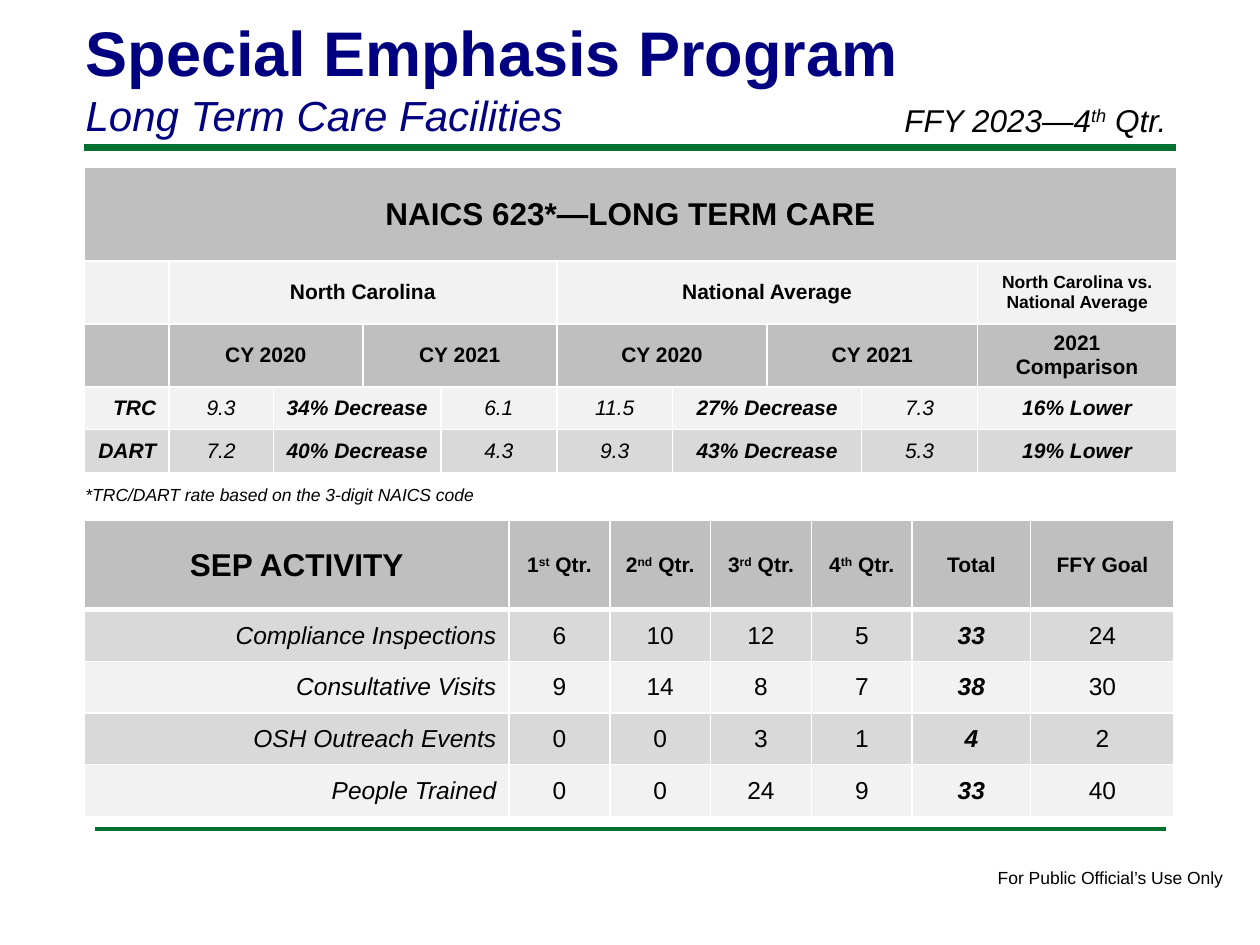
from dataclasses import dataclass

from lxml.etree import SubElement
from pptx import Presentation
from pptx.dml.color import RGBColor
from pptx.enum.shapes import MSO_CONNECTOR
from pptx.enum.text import MSO_ANCHOR, PP_ALIGN
from pptx.oxml.ns import qn
from pptx.util import Inches, Pt


@dataclass(frozen=True)
class Theme:
    font: str = "Arial"
    navy: str = "000080"
    green: str = "007030"
    black: str = "000000"
    white: str = "FFFFFF"
    header: str = "BFBFBF"
    dark: str = "D9D9D9"
    light: str = "F2F2F2"
    title: int = 36
    subtitle: int = 24
    heading: int = 18
    body: int = 14
    label: int = 12
    small: int = 10


THEME = Theme()


@dataclass(frozen=True)
class Style:
    size: int
    bold: bool = False
    italic: bool = False
    color: str = THEME.black
    align: PP_ALIGN = PP_ALIGN.LEFT


@dataclass(frozen=True)
class Cell:
    text: str
    style: Style
    span: int = 1


@dataclass(frozen=True)
class Row:
    height: float
    fill: str
    cells: list[Cell]
    rule: float = 1  # weight of the border below


def add_runs(p, text: str, style: Style) -> None:
    """Write text into a paragraph; parts between carets are superscript."""
    p.alignment = style.align
    for i, part in enumerate(text.split("^")):
        if not part:
            continue
        r = p.add_run()
        r.text = part
        r.font.name = THEME.font
        r.font.size = Pt(style.size)
        r.font.bold = style.bold
        r.font.italic = style.italic
        r.font.color.rgb = RGBColor.from_string(style.color)
        if i % 2:
            r._r.get_or_add_rPr().set("baseline", "30000")


def add_text(s, box: tuple, text: str, style: Style, wrap: bool = False) -> None:
    sp = s.shapes.add_textbox(*map(Inches, box))
    sp.text_frame.word_wrap = wrap
    add_runs(sp.text_frame.paragraphs[0], text, style)


def add_rule(s, left: float, right: float, y: float, weight: float) -> None:
    line = s.shapes.add_connector(MSO_CONNECTOR.STRAIGHT, Inches(left), Inches(y),
                                  Inches(right), Inches(y))
    line.line.color.rgb = RGBColor.from_string(THEME.green)
    line.line.width = Pt(weight)
    SubElement(line._element.spPr, qn("a:effectLst"))


def set_borders(cell, top: float, bottom: float) -> None:
    tc_pr = cell._tc.get_or_add_tcPr()
    weights = {"a:lnL": 1, "a:lnR": 1, "a:lnT": top, "a:lnB": bottom}
    for i, (tag, weight) in enumerate(weights.items()):
        ln = tc_pr.makeelement(qn(tag), {"w": str(Pt(weight))})
        fill = SubElement(ln, qn("a:solidFill"))
        SubElement(fill, qn("a:srgbClr")).set("val", THEME.white)
        tc_pr.insert(i, ln)  # borders come before the fill


def add_grid(s, left: float, top: float, widths: list[float], rows: list[Row]) -> None:
    frame = s.shapes.add_table(len(rows), len(widths), Inches(left), Inches(top),
                               Inches(sum(widths)), Inches(sum(r.height for r in rows)))
    table = frame.table
    table.first_row = table.horz_banding = False
    for col, width in zip(table.columns, widths):
        col.width = Inches(width)
    above = 1
    for i, row in enumerate(rows):
        table.rows[i].height = Inches(row.height)
        for j in range(len(widths)):
            cell = table.cell(i, j)
            cell.fill.solid()
            cell.fill.fore_color.rgb = RGBColor.from_string(row.fill)
            set_borders(cell, above, row.rule)
        j = 0
        for item in row.cells:
            cell = table.cell(i, j)
            if item.span > 1:
                cell.merge(table.cell(i, j + item.span - 1))
            cell.vertical_anchor = MSO_ANCHOR.MIDDLE
            add_runs(cell.text_frame.paragraphs[0], item.text, item.style)
            j += item.span
        above = row.rule


CENTER, RIGHT = PP_ALIGN.CENTER, PP_ALIGN.RIGHT
HEADING = Style(THEME.heading, bold=True, align=CENTER)
LABEL = Style(THEME.label, bold=True, align=CENTER)
SMALL_LABEL = Style(THEME.small, bold=True, align=CENTER)
RATE_NAME = Style(THEME.label, bold=True, italic=True, align=RIGHT)
RATE = Style(THEME.label, italic=True, align=CENTER)
CHANGE = Style(THEME.label, bold=True, italic=True, align=CENTER)
ACTIVITY = Style(THEME.body, italic=True, align=RIGHT)
COUNT = Style(THEME.body, align=CENTER)
TOTAL = Style(THEME.body, bold=True, italic=True, align=CENTER)


def rate_row(fill: str, values: list[str]) -> Row:
    styles = [RATE_NAME, RATE, CHANGE, RATE, RATE, CHANGE, RATE, CHANGE]
    spans = [1, 1, 2, 1, 1, 2, 1, 1]
    return Row(0.34, fill, [Cell(*c) for c in zip(values, styles, spans)])


def activity_row(fill: str, values: list) -> Row:
    styles = [ACTIVITY] + [COUNT] * 4 + [TOTAL, COUNT]
    return Row(0.41, fill, [Cell(str(v), st) for v, st in zip(values, styles)])


def main() -> None:
    prs = Presentation()
    prs.slide_width, prs.slide_height = Inches(10), Inches(7.5)
    s = prs.slides.add_slide(prs.slide_layouts[5])

    # Title and reporting period
    sp = s.shapes.title
    sp.left, sp.top, sp.width, sp.height = map(Inches, (0.58, 0.06, 8.25, 1.11))
    tf = sp.text_frame
    tf.word_wrap = True
    tf.vertical_anchor = MSO_ANCHOR.TOP
    add_runs(tf.paragraphs[0], "Special Emphasis Program",
             Style(THEME.title, bold=True, color=THEME.navy))
    add_runs(tf.add_paragraph(), "Long Term Care Facilities",
             Style(THEME.subtitle, italic=True, color=THEME.navy))
    add_text(s, (7.08, 0.75, 2.5, 0.4), "FFY 2023—4^th^ Qtr.",
             Style(THEME.heading, italic=True), wrap=True)

    # Green rules
    add_rule(s, 0.67, 9.33, 1.17, 4)
    add_rule(s, 0.75, 9.25, 6.58, 2)

    # Injury and illness rates
    years = [Cell(f"CY {year}", LABEL, 2) for year in (2020, 2021)]
    add_grid(s, 0.67, 1.33, [0.67, 0.83, 0.71, 0.62, 0.92, 0.92, 0.75, 0.75, 0.92, 1.58], [
        Row(0.74, THEME.header, [Cell("NAICS 623*—LONG TERM CARE", HEADING, 10)]),
        Row(0.5, THEME.light, [
            Cell("", LABEL), Cell("North Carolina", LABEL, 4),
            Cell("National Average", LABEL, 4),
            Cell("North Carolina vs. National Average", SMALL_LABEL)]),
        Row(0.5, THEME.header,
            [Cell("", LABEL), *years, *years, Cell("2021 Comparison", LABEL)]),
        rate_row(THEME.light, ["TRC", "9.3", "34% Decrease", "6.1",
                               "11.5", "27% Decrease", "7.3", "16% Lower"]),
        rate_row(THEME.dark, ["DART", "7.2", "40% Decrease", "4.3",
                              "9.3", "43% Decrease", "5.3", "19% Lower"]),
    ])
    add_text(s, (0.58, 3.79, 3.38, 0.27), "*TRC/DART rate based on the 3-digit NAICS code",
             Style(THEME.small, italic=True))

    # Program activity by quarter
    heads = ["1^st^ Qtr.", "2^nd^ Qtr.", "3^rd^ Qtr.", "4^th^ Qtr.", "Total", "FFY Goal"]
    add_grid(s, 0.67, 4.13, [3.37, 0.8, 0.8, 0.8, 0.8, 0.94, 1.14], [
        Row(0.71, THEME.header,
            [Cell("SEP ACTIVITY", HEADING)] + [Cell(h, LABEL) for h in heads], rule=3),
        activity_row(THEME.dark, ["Compliance Inspections", 6, 10, 12, 5, 33, 24]),
        activity_row(THEME.light, ["Consultative Visits", 9, 14, 8, 7, 38, 30]),
        activity_row(THEME.dark, ["OSH Outreach Events", 0, 0, 3, 1, 4, 2]),
        activity_row(THEME.light, ["People Trained", 0, 0, 24, 9, 33, 40]),
    ])

    # Footer
    add_text(s, (7.82, 6.83, 2.01, 0.27), "For Public Official’s Use Only", Style(THEME.small))

    prs.save("out.pptx")


if __name__ == "__main__":
    main()
